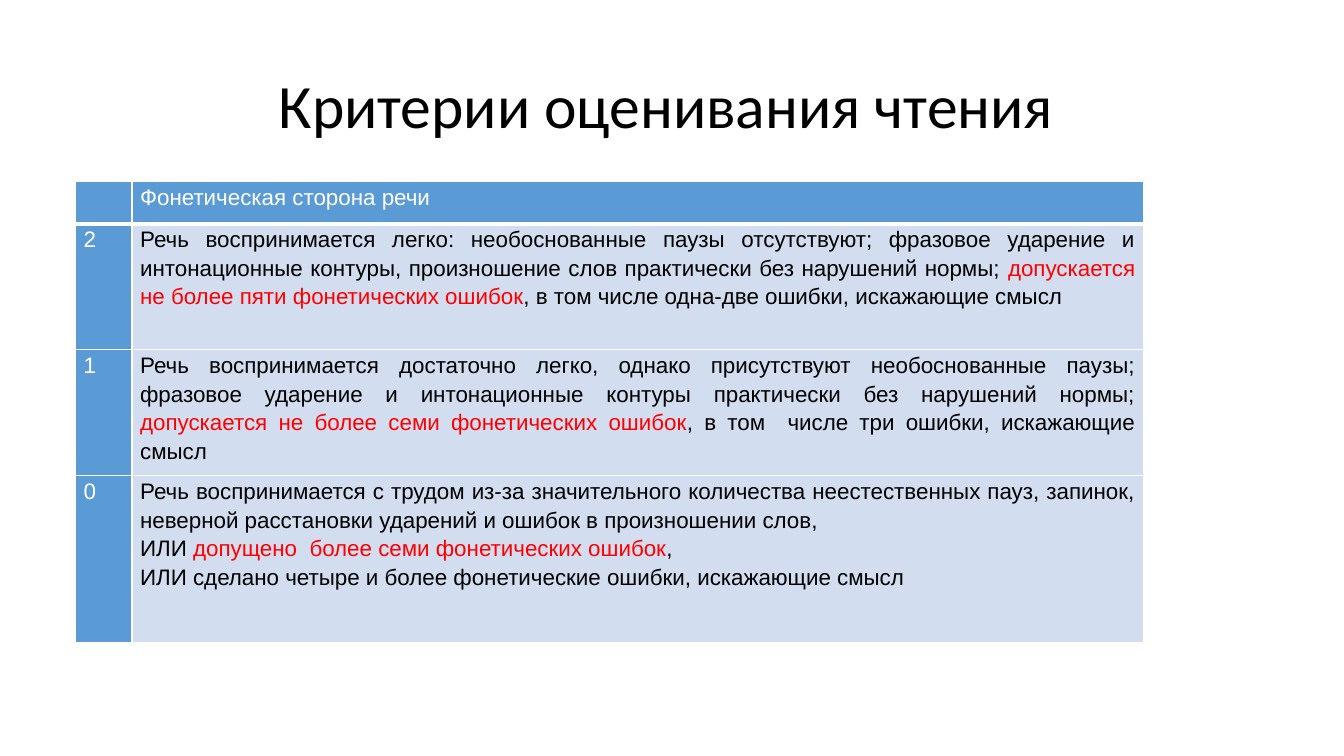
from lxml.etree import SubElement
from pptx import Presentation
from pptx.dml.color import RGBColor
from pptx.enum.text import MSO_ANCHOR, MSO_AUTO_SIZE, PP_ALIGN
from pptx.oxml.ns import qn
from pptx.util import Inches, Pt

COLORS = {"text": "000000", "light": "FFFFFF", "accent": "FF0000",
          "head": "5B9BD5", "body": "D2DEEF"}
GRID = 0.1  # inches per grid column and row
TITLE_FORMAT = {"name": "Calibri", "size": Pt(44), "bold": False}
CELL_FORMAT = {"name": "Arial", "size": Pt(16), "bold": False}
CELL_MARGINS = {"margin_left": Inches(0.08), "margin_right": Inches(0.08),
                "margin_top": 0, "margin_bottom": 0}

# Each cell is a list of paragraphs, each paragraph a list of (text, color) spans.
CRITERIA = [
    ("", [[("Фонетическая сторона речи", "light")]]),
    ("2", [[
        ("Речь воспринимается легко: необоснованные паузы отсутствуют; фразовое ударение и "
         "интонационные контуры, произношение слов практически без нарушений нормы; ", "text"),
        ("допускается не более пяти фонетических ошибок", "accent"),
        (", в том числе одна-две ошибки, искажающие смысл", "text")]]),
    ("1", [[
        ("Речь воспринимается достаточно легко, однако присутствуют необоснованные паузы; "
         "фразовое ударение и интонационные контуры практически без нарушений нормы; ", "text"),
        ("допускается не более семи фонетических ошибок", "accent"),
        (", в том  числе три ошибки, искажающие смысл", "text")]]),
    ("0", [
        [("Речь воспринимается с трудом из-за значительного количества неестественных пауз, "
          "запинок, неверной расстановки ударений и ошибок в произношении слов, ", "text")],
        [("ИЛИ ", "text"), ("допущено  более семи фонетических ошибок", "accent"),
         (", ", "text")],
        [("ИЛИ сделано четыре и более фонетические ошибки, искажающие смысл ", "text")]]),
]


def apply(target, values):
    for name, value in values.items():
        setattr(target, name, value)


def grid(*steps):
    """Turn grid steps into lengths."""
    return [Inches(step * GRID) for step in steps]


class SlideBuilder:
    def __init__(self, deck):
        self.page = deck.slides.add_slide(deck.slide_layouts[5])

    def fill_text(self, frame, paragraphs, font, **para_format):
        for index, spans in enumerate(paragraphs):
            para = frame.add_paragraph() if index else frame.paragraphs[0]
            apply(para, para_format)
            apply(para.font, font)
            for text, color in spans:
                span = para.add_run()
                span.text = text
                apply(span.font, font)
                span.font.color.rgb = RGBColor.from_string(COLORS[color])

    def title(self, text, left, top, width, height):
        box = self.page.shapes.title
        box.left, box.top, box.width, box.height = grid(left, top, width, height)
        apply(box.text_frame, {"word_wrap": True, "auto_size": MSO_AUTO_SIZE.NONE,
                               "vertical_anchor": MSO_ANCHOR.MIDDLE})
        self.fill_text(box.text_frame, [[(text, "text")]], TITLE_FORMAT,
                       alignment=PP_ALIGN.CENTER, line_spacing=0.9)

    def borders(self, cell, bottom):
        properties = cell._tc.get_or_add_tcPr()
        for side, width in (("L", 1), ("R", 1), ("T", 1), ("B", bottom)):
            line = SubElement(properties, qn(f"a:ln{side}"), w=str(Pt(width)))
            fill = SubElement(line, qn("a:solidFill"))
            SubElement(fill, qn("a:srgbClr"), val=COLORS["light"])

    def cell(self, cell, paragraphs, fill, alignment, bottom):
        apply(cell, CELL_MARGINS)
        self.borders(cell, bottom)
        cell.fill.solid()
        cell.fill.fore_color.rgb = RGBColor.from_string(COLORS[fill])
        self.fill_text(cell.text_frame, paragraphs, CELL_FORMAT,
                       alignment=alignment, line_spacing=1.15)

    def criteria_table(self, criteria, left, top, columns, rows):
        table = self.page.shapes.add_table(
            len(rows), len(columns), *grid(left, top, sum(columns), sum(rows))).table
        table.horz_banding = False
        for column, width in zip(table.columns, grid(*columns)):
            column.width = width
        for row, height in zip(table.rows, grid(*rows)):
            row.height = height
        for index, (score, description) in enumerate(criteria):
            header = index == 0
            bottom = 3 if header else 1
            score_spans = [(score, "light")] if score else []
            self.cell(table.cell(index, 0), [score_spans], "head", PP_ALIGN.LEFT, bottom)
            self.cell(table.cell(index, 1), description, "head" if header else "body",
                      PP_ALIGN.LEFT if header else PP_ALIGN.JUSTIFY, bottom)


def main():
    deck = Presentation()
    deck.slide_width, deck.slide_height = Inches(13.33), Inches(7.5)
    builder = SlideBuilder(deck)
    builder.title("Критерии оценивания чтения", 8.6, 3.5, 115, 14.5)
    builder.criteria_table(CRITERIA, 7.5, 18, columns=(5.6, 100.3),
                           rows=(4.2, 12.5, 12.5, 16.6))
    deck.save("out.pptx")


if __name__ == "__main__":
    main()
